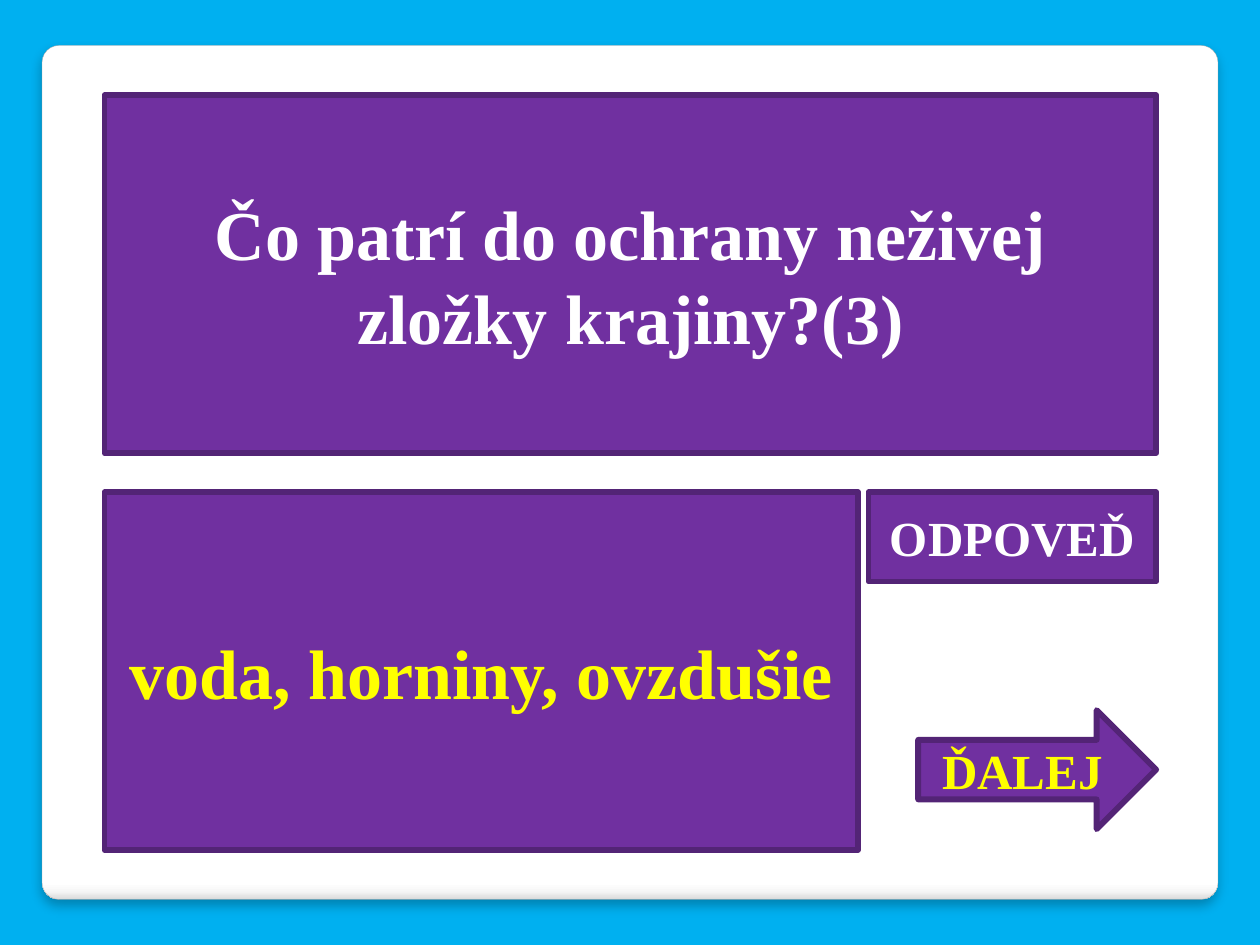
from dataclasses import dataclass

import lxml.etree
import pptx
import pptx.dml.color
import pptx.enum.shapes
import pptx.enum.text
import pptx.oxml.ns
import pptx.util

Pt = pptx.util.Pt
RGB = pptx.dml.color.RGBColor.from_string
qn = pptx.oxml.ns.qn
SHAPE = pptx.enum.shapes.MSO_SHAPE


@dataclass(frozen=True)
class Theme:
    font: str = "Times New Roman"
    background: str = "00B0F0"
    card: str = "7030A0"
    card_edge: str = "532476"
    panel_edge: str = "A4A4A4"
    panel_stops: tuple = ((0, "FFFFFF"), (98, "FFFFFF"), (99, "F7F7F7"), (100, "DADADA"))
    shadow: str = "000000"
    text: str = "FFFFFF"
    accent: str = "FFFF00"
    large: int = 40
    small: int = 28
    edge_width: float = 3.35


THEME = Theme()


def add_color(parent, color):
    return lxml.etree.SubElement(parent, qn("a:srgbClr"), val=color)


def add_panel(slide, box):
    """Rounded white panel with a grey lower rim and a soft shadow."""
    panel = slide.shapes.add_shape(SHAPE.ROUNDED_RECTANGLE, *map(Pt, box))
    panel.adjustments[0] = 0.02
    panel.line.color.rgb = RGB(THEME.panel_edge)
    panel.line.width = Pt(0.16)

    # Gradient from top to bottom
    panel.fill.gradient()
    panel.fill.gradient_angle = 270
    stops = panel.element.spPr.find(".//" + qn("a:gsLst"))
    for stop in list(stops):
        stops.remove(stop)
    for percent, color in THEME.panel_stops:
        add_color(lxml.etree.SubElement(stops, qn("a:gs"), pos=str(percent * 1000)), color)

    # Shadow below
    panel.shadow.inherit = False
    shadow = lxml.etree.SubElement(
        panel.element.spPr.find(qn("a:effectLst")), qn("a:outerShdw"),
        blurRad=str(Pt(6)), dist=str(Pt(4)), dir="5400000", algn="t", rotWithShape="0")
    lxml.etree.SubElement(add_color(shadow, THEME.shadow), qn("a:alpha"), val="25000")

    # Behind the title
    slide.shapes.element.insert(2, panel.element)


def style_card(card, text, size, color):
    """Purple card with a dark rounded edge and centred bold text."""
    card.fill.solid()
    card.fill.fore_color.rgb = RGB(THEME.card)
    card.line.color.rgb = RGB(THEME.card_edge)
    card.line.width = Pt(THEME.edge_width)
    lxml.etree.SubElement(card.element.spPr.find(qn("a:ln")), qn("a:round"))
    card.shadow.inherit = False

    frame = card.text_frame
    frame.text = text
    frame.word_wrap = True
    frame.auto_size = pptx.enum.text.MSO_AUTO_SIZE.NONE
    frame.vertical_anchor = pptx.enum.text.MSO_ANCHOR.MIDDLE
    paragraph = frame.paragraphs[0]
    paragraph.alignment = pptx.enum.text.PP_ALIGN.CENTER
    paragraph.font.name = THEME.font
    paragraph.font.size = Pt(size)
    paragraph.font.bold = True
    paragraph.font.color.rgb = RGB(color)


def add_card(slide, box, text, size, color, kind=SHAPE.RECTANGLE):
    style_card(slide.shapes.add_shape(kind, *map(Pt, box)), text, size, color)


def place_question(slide, box, text):
    question = slide.shapes.title
    question.left, question.top, question.width, question.height = map(Pt, box)
    style_card(question, text, THEME.large, THEME.text)


def add_answer_row(slide, box, answer, label, following):
    """Answer on the left, its label and the arrow onward on the right."""
    left, top, width, height = box
    right = left + width
    label_width, arrow_width, arrow_height = 164.4, 136, 68
    add_card(slide, (left, top, 430.6, height), answer, THEME.large, THEME.accent)
    add_card(slide, (right - label_width, top, label_width, 51), label,
             THEME.small, THEME.text)
    add_card(slide, (right - arrow_width, top + 124.5, arrow_width, arrow_height),
             following, THEME.small, THEME.accent, SHAPE.RIGHT_ARROW)


def main():
    deck = pptx.Presentation()
    deck.slide_width, deck.slide_height = Pt(720), Pt(540)
    slide = deck.slides.add_slide(deck.slide_layouts.get_by_name("Title Only"))
    slide.background.fill.solid()
    slide.background.fill.fore_color.rgb = RGB(THEME.background)

    left, width, height = 59.7, 601, 204.4
    add_panel(slide, (24, 26, 672, 488))
    place_question(slide, (left, 54.5, width, height),
                   "Čo patrí do ochrany neživej zložky krajiny?(3)")
    add_answer_row(slide, (left, 281.3, width, height),
                   "voda, horniny, ovzdušie", "ODPOVEĎ", "ĎALEJ")
    deck.save("out.pptx")


if __name__ == "__main__":
    main()
